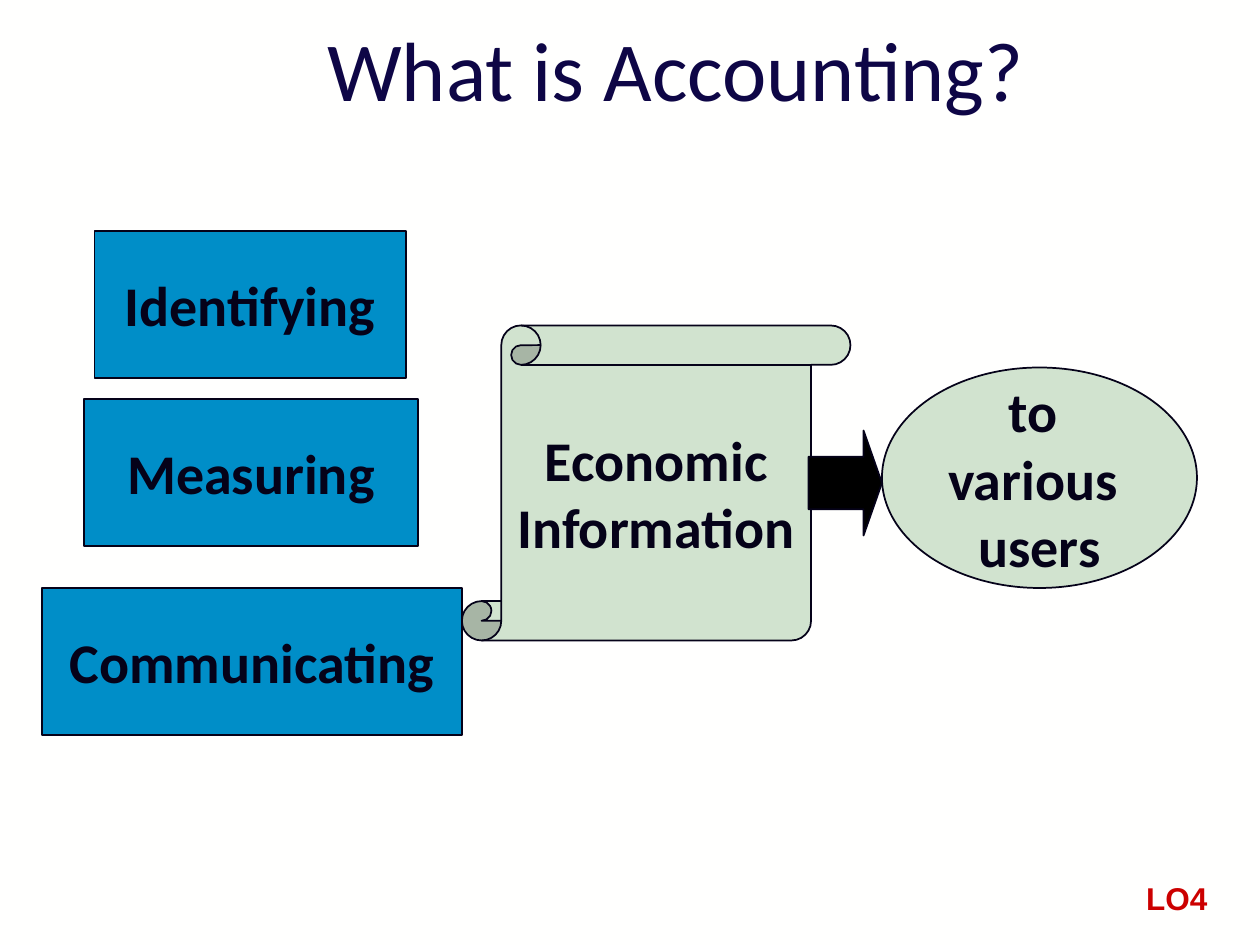
import pptx
import pptx.util
import pptx.dml.color
import pptx.enum.shapes
import pptx.enum.text

Pt = pptx.util.Pt
RGBColor = pptx.dml.color.RGBColor
Shape = pptx.enum.shapes.MSO_SHAPE
Align = pptx.enum.text.PP_ALIGN
Anchor = pptx.enum.text.MSO_ANCHOR

PAPER = RGBColor(0xFF, 0xFF, 0xFE)
NAVY = RGBColor(0x0E, 0x06, 0x46)
INK = RGBColor(0x05, 0x02, 0x19)
BLUE = RGBColor(0x00, 0x8E, 0xC8)
GREEN = RGBColor(0xD1, 0xE3, 0xCF)
BLACK = RGBColor(0, 0, 0)
RED = RGBColor(0xCC, 0, 0)


class Deck:
    """Draw styled elements on the current slide, with lengths in points."""

    def __init__(self, width, height):
        self.file = pptx.Presentation()
        self.file.slide_width, self.file.slide_height = Pt(width), Pt(height)
        self.slide = self.file.slides.add_slide(self.file.slide_layouts[6])
        self.slide.background.fill.solid()
        self.slide.background.fill.fore_color.rgb = PAPER

    def letter(self, frame, text, size, color, face="Calibri", bold=True, align=Align.CENTER):
        frame.text = text
        for para in frame.paragraphs:
            para.alignment = align
            for run in para.runs:
                font = run.font
                font.name, font.size, font.bold = face, Pt(size), bold
                font.color.rgb = color

    def label(self, text, left, top, width, height, size, color, face, bold):
        frame = self.slide.shapes.add_textbox(Pt(left), Pt(top), Pt(width), Pt(height)).text_frame
        frame.word_wrap = True
        frame.vertical_anchor = Anchor.MIDDLE
        frame.margin_left = frame.margin_right = 0
        self.letter(frame, text, size, color, face, bold, Align.LEFT)

    def shape(self, kind, left, top, width, height, fill, text="", turns=()):
        item = self.slide.shapes.add_shape(kind, Pt(left), Pt(top), Pt(width), Pt(height))
        item.shadow.inherit = False
        item.fill.solid()
        item.fill.fore_color.rgb = fill
        item.line.color.rgb = INK
        item.line.width = Pt(1)
        for place, value in enumerate(turns):
            item.adjustments[place] = value
        if text:
            frame = item.text_frame
            frame.word_wrap = False
            frame.vertical_anchor = Anchor.MIDDLE
            self.letter(frame, text, 32, INK)


def main():
    deck = Deck(720, 540)
    deck.label("What is Accounting?", 187, 9, 420, 60, 48, NAVY, "Calibri", False)
    steps = (
        ("Identifying", 54, 132, 178),
        ("Measuring", 48, 228, 191),
        ("Communicating", 24, 336, 240),
    )
    for text, left, top, width in steps:
        deck.shape(Shape.RECTANGLE, left, top, width, 84, BLUE, text)
    deck.shape(Shape.VERTICAL_SCROLL, 264, 186, 222, 180, GREEN, "Economic\nInformation", (0.125,))
    deck.shape(Shape.OVAL, 504, 210, 180, 126, GREEN, "to \nvarious \nusers")
    deck.shape(Shape.RIGHT_ARROW, 462, 246, 42, 60, BLACK, turns=(0.5, 0.25))
    deck.label("LO4", 655, 498, 53, 30, 18, RED, "Arial", True)
    deck.file.save("out.pptx")


if __name__ == "__main__":
    main()
